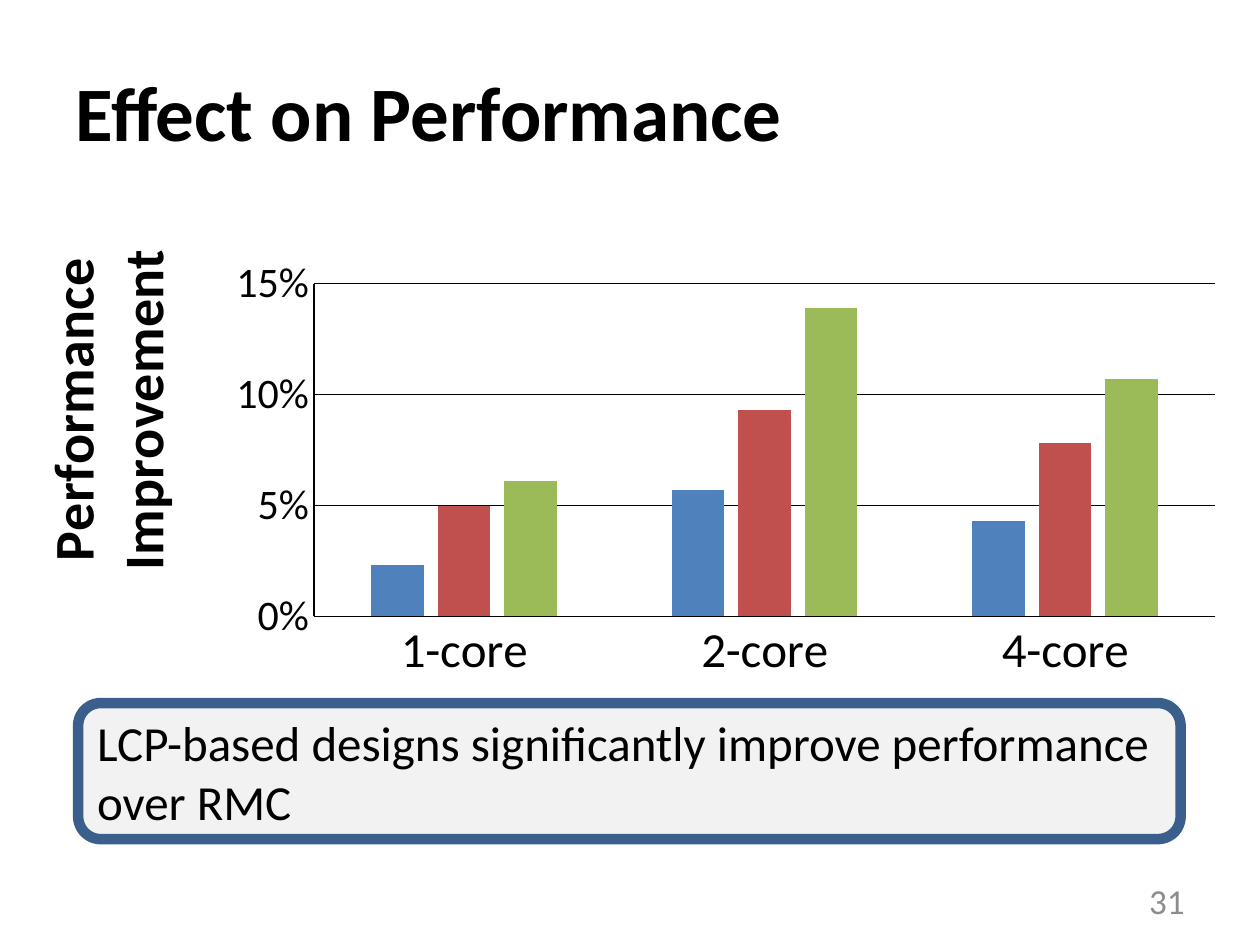
"""Build the slide on how the designs affect performance."""
from lxml.etree import SubElement
from pptx import Presentation
from pptx.chart.data import CategoryChartData
from pptx.dml.color import RGBColor
from pptx.enum.chart import XL_CHART_TYPE, XL_TICK_MARK
from pptx.enum.shapes import MSO_SHAPE
from pptx.enum.text import MSO_ANCHOR, PP_ALIGN
from pptx.oxml.ns import qn
from pptx.util import Inches, Pt

COLORS = {"text": "000000", "number": "8C8C8C", "box": "F2F2F2", "border": "3A5F8C",
          "blue": "4F81BD", "red": "C0504D", "green": "9BBB59"}
TITLE = "Effect on Performance"
TAKEAWAY = "LCP-based designs significantly improve performance over RMC"
PAGE_NUMBER = "31"
AXIS_TITLE = ["Performance", "Improvement"]
CORES = ["1-core", "2-core", "4-core"]
IMPROVEMENTS = {
    "blue": [0.023, 0.057, 0.043],
    "red": [0.05, 0.093, 0.078],
    "green": [0.061, 0.139, 0.107],
}
BOXES = {
    "title": (0.5, 0.25, 9, 1.25),
    "chart": (0.17, 1.17, 9.67, 4.33),
    "takeaway": (0.62, 5.58, 8.75, 1.08),
    "number": (7.17, 6.95, 2.33, 0.4),
}
PLOT_LAYOUT = {"layoutTarget": "inner", "xMode": "edge", "yMode": "edge",
               "x": 0.24, "y": 0.25, "w": 0.74, "h": 0.61}
AXIS_TITLE_LAYOUT = {"xMode": "edge", "yMode": "edge", "x": 0.01, "y": 0.18}


def place(name):
    return [Inches(length) for length in BOXES[name]]


def set_attributes(target, values):
    for name, value in values.items():
        setattr(target, name, value)


def format_font(font, size, color="text", bold=False):
    set_attributes(font, {"name": "Calibri", "size": Pt(size), "bold": bold})
    font.color.rgb = RGBColor.from_string(COLORS[color])


def format_fill(fill, color):
    fill.solid()
    fill.fore_color.rgb = RGBColor.from_string(COLORS[color])


def format_line(line, width, color="text"):
    line.color.rgb = RGBColor.from_string(COLORS[color])
    line.width = Pt(width)


def write(shape, text, size, color="text", bold=False, align=PP_ALIGN.LEFT):
    frame = shape.text_frame
    set_attributes(frame, {"text": text, "word_wrap": True, "vertical_anchor": MSO_ANCHOR.MIDDLE})
    paragraph = frame.paragraphs[0]
    paragraph.alignment = align
    format_font(paragraph.runs[0].font, size, color, bold)


def set_layout(parent, values):
    for old in parent.findall(qn("c:layout")):
        parent.remove(old)
    layout = SubElement(parent, qn("c:layout"))
    manual = SubElement(layout, qn("c:manualLayout"))
    for name, value in values.items():
        SubElement(manual, qn(f"c:{name}")).set("val", str(value))
    return layout


def add_performance_chart(slide):
    data = CategoryChartData(number_format="0%")
    data.categories = CORES
    for values in IMPROVEMENTS.values():
        data.add_series("", values)
    chart = slide.shapes.add_chart(XL_CHART_TYPE.COLUMN_CLUSTERED, *place("chart"), data).chart
    set_attributes(chart, {"has_legend": False, "has_title": False})
    format_font(chart.font, 10)
    plot = chart.plots[0]
    set_attributes(plot, {"gap_width": 219, "overlap": -27, "vary_by_categories": False})
    for series, color in zip(plot.series, IMPROVEMENTS):
        format_fill(series.format.fill, color)

    for axis, size in ((chart.category_axis, 28), (chart.value_axis, 24)):
        set_attributes(axis, {"major_tick_mark": XL_TICK_MARK.NONE,
                              "minor_tick_mark": XL_TICK_MARK.NONE})
        format_font(axis.tick_labels.font, size)
        format_line(axis.format.line, 0.75)
    axis = chart.value_axis
    set_attributes(axis, {"minimum_scale": 0, "maximum_scale": 0.15, "major_unit": 0.05})
    set_attributes(axis.tick_labels, {"number_format": "0%", "number_format_is_linked": False})
    format_line(axis.major_gridlines.format.line, 0.25)
    frame = axis.axis_title.text_frame
    frame.text = "\n".join(AXIS_TITLE)
    for paragraph in frame.paragraphs:
        format_font(paragraph.runs[0].font, 32, bold=True)

    title = axis.axis_title._element
    title.find(qn("c:tx")).addnext(set_layout(title, AXIS_TITLE_LAYOUT))
    plot_area = chart._chartSpace.chart.plotArea
    plot_area.insert(0, set_layout(plot_area, PLOT_LAYOUT))


def add_takeaway(slide):
    shape = slide.shapes.add_shape(MSO_SHAPE.ROUNDED_RECTANGLE, *place("takeaway"))
    shape.shadow.inherit = False
    format_fill(shape.fill, "box")
    format_line(shape.line, 6, "border")
    write(shape, TAKEAWAY, 28)


def main():
    presentation = Presentation()
    set_attributes(presentation, {"slide_width": Inches(10), "slide_height": Inches(7.5)})
    slide = presentation.slides.add_slide(presentation.slide_layouts[5])
    title = slide.shapes.title
    set_attributes(title, dict(zip(("left", "top", "width", "height"), place("title"))))
    write(title, TITLE, 44, bold=True)
    add_performance_chart(slide)
    add_takeaway(slide)
    number = slide.shapes.add_textbox(*place("number"))
    write(number, PAGE_NUMBER, 20, "number", align=PP_ALIGN.RIGHT)
    presentation.save("out.pptx")


if __name__ == "__main__":
    main()
